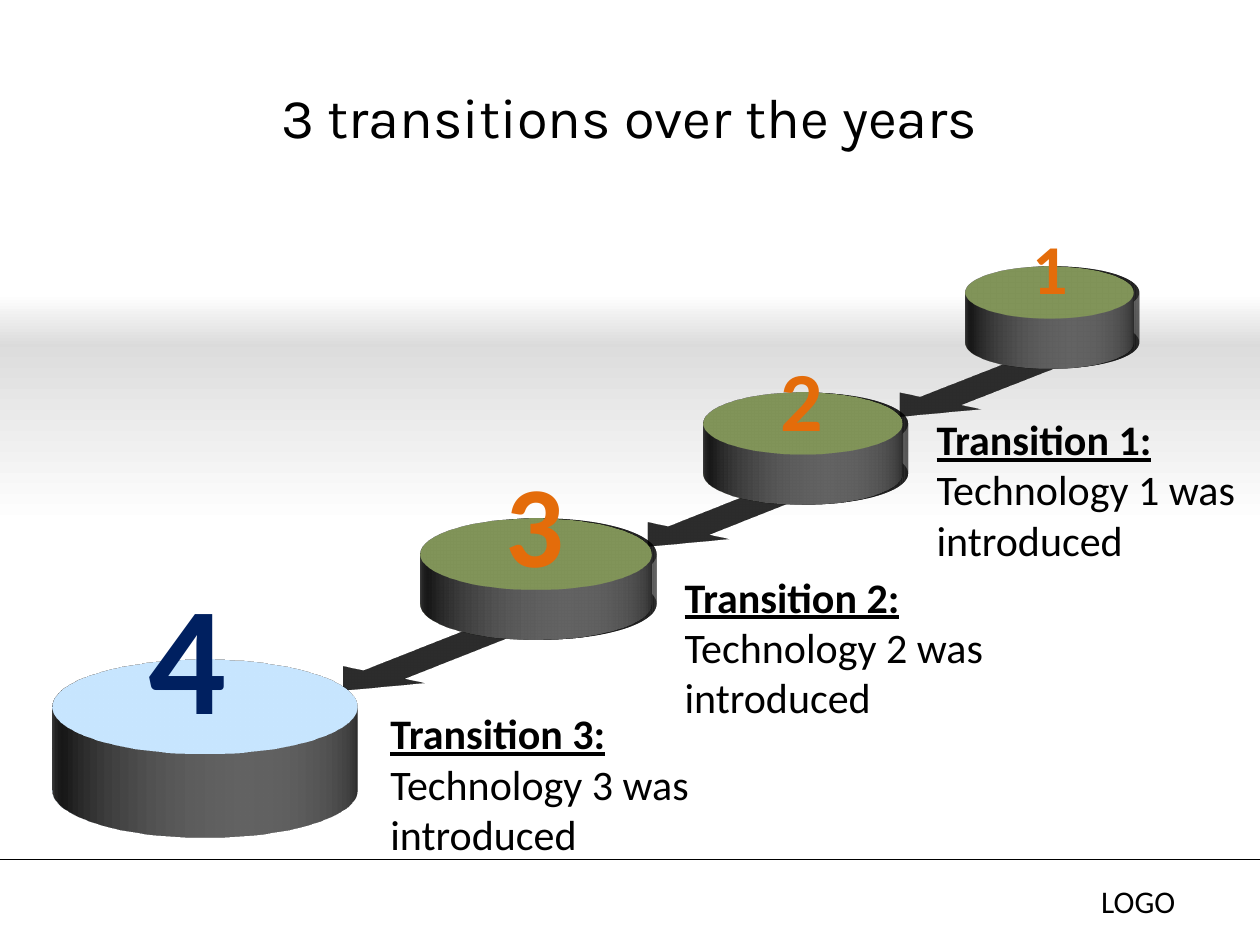
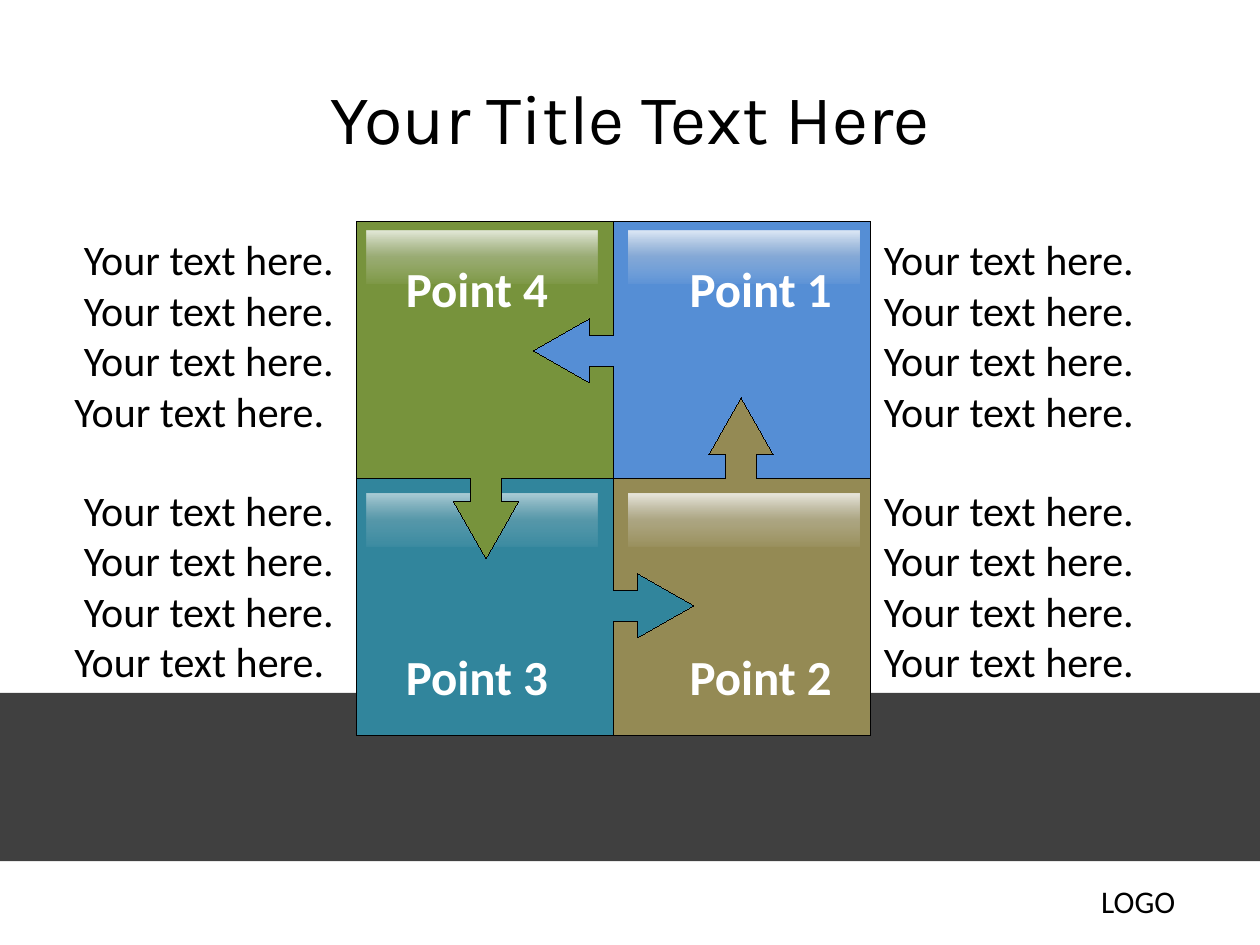
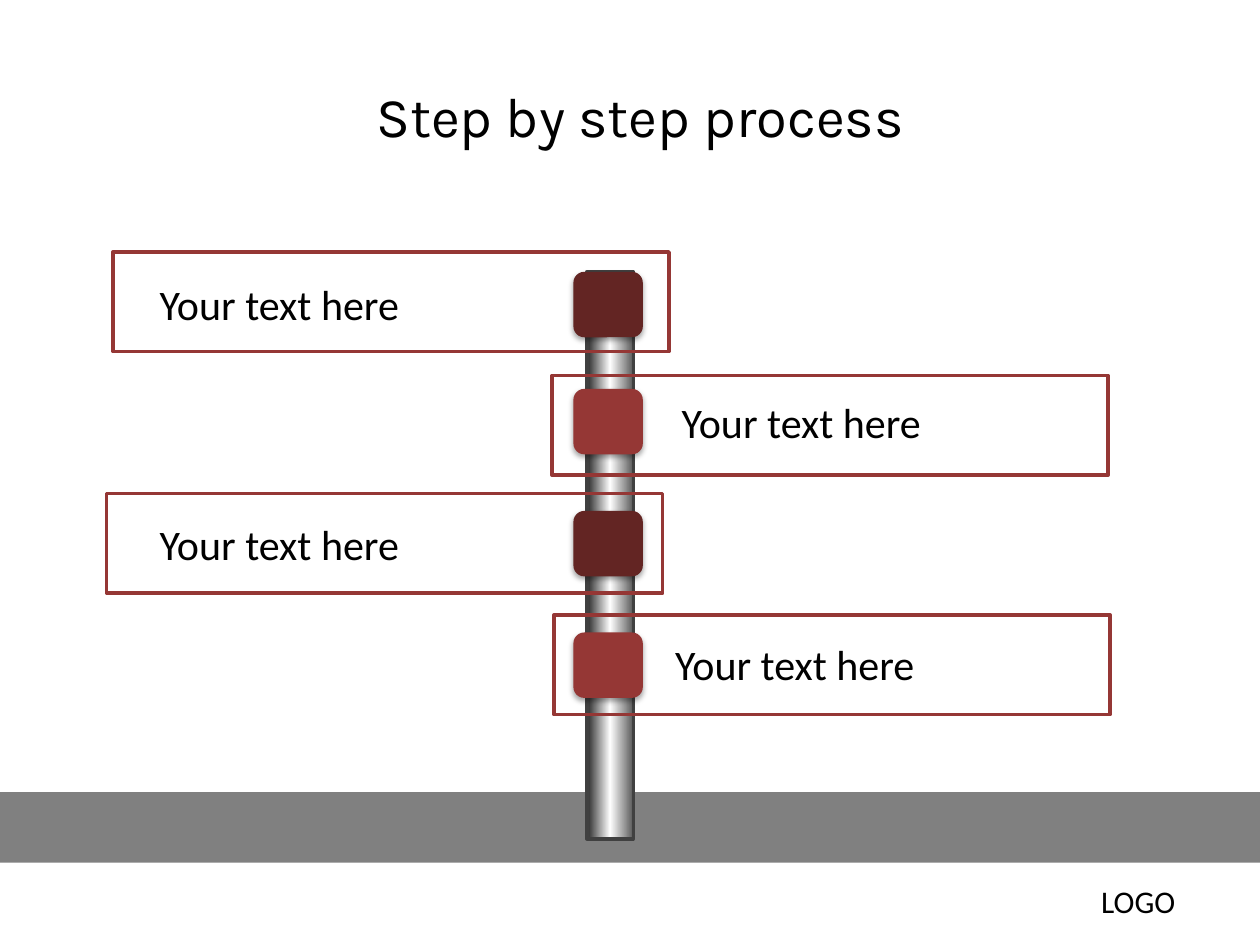
from dataclasses import dataclass
from typing import NamedTuple

from pptx import Presentation
from pptx.dml.color import RGBColor
from pptx.enum.shapes import MSO_CONNECTOR, MSO_SHAPE
from pptx.enum.text import MSO_ANCHOR, MSO_AUTO_SIZE, PP_ALIGN
from pptx.oxml import parse_xml
from pptx.oxml.ns import nsdecls, qn
from pptx.shapes.base import BaseShape
from pptx.slide import Slide
from pptx.text.text import Font
from pptx.util import Cm, Pt

COLOURS = {
    "black": "000000", "white": "FFFFFF", "mist": "DDDDDD", "haze": "DBDBDB",
    "steel": "C0C0C0", "moss": "4F6228", "sky": "95B3D7",
    "orange": "E46C0A", "navy": "002060",
    "charcoal": "404040", "green": "77933C", "blue": "558ED5",
    "teal": "31859C", "tan": "948A54", "sheen mid": "D9D9D9", "sheen end": "F2F2F2",
    "ground": "808080", "pole left": "262626", "pole right": "595959",
    "maroon": "632523", "red": "953735",
}
BODY_FONT, TITLE_FONT = "Calibri", "Karla"
SLIDE_WIDTH, SLIDE_HEIGHT = 25.4, 19.05
HAIRLINE = 0.01


class Point(NamedTuple):
    x: float
    y: float


class Area(NamedTuple):
    """Left, top, width and height in centimetres."""
    left: float
    top: float
    width: float
    height: float

    def lengths(self) -> list[int]:
        return [Cm(value) for value in self]


class Stop(NamedTuple):
    position: int
    colour: str
    opacity: int = 100


class View(NamedTuple):
    """Camera angles in degrees."""
    latitude: float
    longitude: float
    revolution: float


class Shadow(NamedTuple):
    blur: float
    distance: float
    direction: int
    opacity: int


@dataclass
class Stage:
    number: str
    corner: Point
    diameter: float
    depth: int
    cap: str
    number_area: Area
    number_size: int
    number_colour: str = "orange"
    shaded: bool = True


@dataclass
class Transition:
    number: int
    arrow: Point
    note: Point


@dataclass
class Piece:
    label: str
    colour: str
    quarter_turns: int
    column: int
    row: int
    sheen: tuple[int, int] = (81, 35)


@dataclass
class Step:
    frame: Point
    marker_top: float
    colour: str
    text_area: Area


TITLE_AREA = Area(1.27, 0.76, 22.86, 3.18)
FOOTER_LINE = 17.32
LOGO_AREA = Area(21.95, 17.65, 2.82, 1.02)

DISC_VIEW = View(288, 0, 0)
ARROW_VIEW = View(319.2, 67.2, 291.2)
DISC_SHADOW = Shadow(16, 3, 0, 40)
MARKER_SHADOW = Shadow(3.1, 1.8, 90, 35)
STAGES = [
    Stage("4", Point(1.06, 11.18), 6.14, 50, "sky",
          Area(2.74, 11.18, 2.11, 4.01), 88, "navy", False),
    Stage("3", Point(8.47, 8.84), 4.66, 30, "moss", Area(9.95, 8.99, 1.7, 3.07), 66),
    Stage("2", Point(14.18, 6.53), 4.02, 30, "moss", Area(15.49, 6.88, 1.37, 2.31), 48),
    Stage("1", Point(19.47, 4.2), 3.39, 30, "moss", Area(20.57, 4.4, 1.24, 1.96), 40),
]
TRANSITIONS = [
    Transition(3, Point(7.41, 10.92), Point(7.62, 14.14)),
    Transition(2, Point(13.55, 8.01), Point(13.55, 11.39)),
    Transition(1, Point(18.63, 5.4), Point(18.63, 8.21)),
]

PUZZLE_CENTRE = Point(12.37, 9.64)
PIECE_SIDE = 5.18
PIECES = [
    Piece("Point 3", "teal", 1, 0, 1, (59, 22)),
    Piece("Point 2", "tan", 2, 1, 1),
    Piece("Point 1", "blue", 3, 1, 0),
    Piece("Point 4", "green", 0, 0, 0),
]
SHEEN_LEFTS, SHEEN_TOPS = (7.39, 12.68), (4.65, 9.95)
LABEL_LEFTS, LABEL_TOPS = (7.81, 13.53), (5.08, 12.9)
PARAGRAPH_TOPS = (4.59, 9.64)

STEPS = [
    Step(Point(2.28, 5.08), 5.48, "maroon", Area(2.97, 5.48, 7.37, 1.27)),
    Step(Point(11.13, 7.57), 7.84, "red", Area(13.49, 7.87, 6.4, 1.27)),
    Step(Point(2.15, 9.95), 10.3, "maroon", Area(2.97, 10.33, 8.15, 1.27)),
    Step(Point(11.17, 12.4), 12.75, "red", Area(13.36, 12.75, 7.04, 1.27)),
]


def rgb(name: str) -> RGBColor:
    return RGBColor.from_string(COLOURS[name])


def style_font(font: Font, size: int, colour: str = "black",
               bold: bool = False, name: str = BODY_FONT) -> None:
    font.name, font.size, font.bold = name, Pt(size), bold
    font.color.rgb = rgb(colour)


def colour_xml(name: str, opacity: int = 100) -> str:
    return (f'<a:srgbClr val="{COLOURS[name]}">'
            f'<a:alpha val="{opacity * 1000}"/></a:srgbClr>')


def finish(shape: BaseShape, fill: str | None = None,
           line: str | None = None, line_width: float = HAIRLINE) -> BaseShape:
    """Set fill and line, and remove the theme shadow."""
    shape.shadow.inherit = False
    if fill:
        shape.fill.solid()
        shape.fill.fore_color.rgb = rgb(fill)
    else:
        shape.fill.background()
    if line:
        shape.line.color.rgb = rgb(line)
        shape.line.width = Pt(line_width)
    else:
        shape.line.fill.background()
    return shape


def add_preset(page: Slide, kind: MSO_SHAPE, area: Area, fill: str | None = None,
               line: str | None = None, line_width: float = HAIRLINE) -> BaseShape:
    return finish(page.shapes.add_shape(kind, *area.lengths()), fill, line, line_width)


def add_outline(page: Slide, points: list[Point], fill: str, line: str) -> BaseShape:
    corners = [(Cm(point.x), Cm(point.y)) for point in points]
    builder = page.shapes.build_freeform(*corners[0])
    builder.add_line_segments(corners[1:], close=True)
    return finish(builder.convert_to_shape(), fill, line)


def set_gradient(shape: BaseShape, stops: list[Stop], angle: int) -> None:
    """Replace an empty fill with a gradient, its angle clockwise in degrees."""
    marks = "".join(f'<a:gs pos="{stop.position * 1000}">'
                    f'{colour_xml(stop.colour, stop.opacity)}</a:gs>' for stop in stops)
    gradient = parse_xml(
        f'<a:gradFill {nsdecls("a")} rotWithShape="1"><a:gsLst>{marks}</a:gsLst>'
        f'<a:lin ang="{angle * 60000}" scaled="0"/></a:gradFill>')
    properties = shape._element.spPr
    properties.replace(properties.find(qn("a:noFill")), gradient)


def add_shadow(shape: BaseShape, shadow: Shadow) -> None:
    shape._element.spPr.find(qn("a:effectLst")).append(parse_xml(
        f'<a:outerShdw {nsdecls("a")} blurRad="{Pt(shadow.blur)}" '
        f'dist="{Pt(shadow.distance)}" dir="{shadow.direction * 60000}" '
        f'algn="ctr" rotWithShape="0">{colour_xml("black", shadow.opacity)}'
        '</a:outerShdw>'))


def set_view(shape: BaseShape, view: View, depth: int = 0) -> None:
    """Turn a shape in space and extrude it by a depth in points."""
    latitude, longitude, revolution = (round(angle * 60000) for angle in view)
    properties = shape._element.spPr
    properties.append(parse_xml(
        f'<a:scene3d {nsdecls("a")}><a:camera prst="orthographicFront">'
        f'<a:rot lat="{latitude}" lon="{longitude}" rev="{revolution}"/></a:camera>'
        '<a:lightRig rig="threePt" dir="t"/></a:scene3d>'))
    if depth:
        properties.append(parse_xml(
            f'<a:sp3d {nsdecls("a")} extrusionH="{Pt(depth)}"><a:extrusionClr>'
            f'{colour_xml("steel")}</a:extrusionClr></a:sp3d>'))


def add_text(page: Slide, area: Area, lines: list[str], size: int, colour: str = "black",
             bold: bool = False, align: PP_ALIGN = PP_ALIGN.LEFT,
             wrap: bool = True) -> BaseShape:
    box = page.shapes.add_textbox(*area.lengths())
    frame = box.text_frame
    frame.word_wrap = wrap
    frame.auto_size = MSO_AUTO_SIZE.SHAPE_TO_FIT_TEXT
    frame.text = "\n".join(lines)
    for paragraph in frame.paragraphs:
        paragraph.alignment = align
        style_font(paragraph.font, size, colour, bold)
    return box


def add_page(deck: Presentation, title: str, size: int, area: Area = TITLE_AREA) -> Slide:
    page = deck.slides.add_slide(deck.slide_layouts[5])
    box = page.shapes.title
    box.left, box.top, box.width, box.height = area.lengths()
    frame = box.text_frame
    frame.text = title
    frame.vertical_anchor = MSO_ANCHOR.MIDDLE
    frame.paragraphs[0].alignment = PP_ALIGN.CENTER
    style_font(frame.paragraphs[0].font, size, name=TITLE_FONT)
    return page


def move_footer_to_layout(page: Slide) -> None:
    """Draw the footer line and logo text, then share them through the layout."""
    rule = page.shapes.add_connector(MSO_CONNECTOR.STRAIGHT, Cm(0), Cm(FOOTER_LINE),
                                     Cm(SLIDE_WIDTH), Cm(FOOTER_LINE))
    rule.line.color.rgb = rgb("black")
    rule.line.width = Pt(0.75)
    rule._element.spPr.append(parse_xml(f'<a:effectLst {nsdecls("a")}/>'))
    logo = add_text(page, LOGO_AREA, ["LOGO"], 18)
    for shape in (rule, logo):
        page.slide_layout.shapes._spTree.append(shape._element)


def add_band(page: Slide, top: float, height: float, fill: str | None = None) -> BaseShape:
    return add_preset(page, MSO_SHAPE.RECTANGLE, Area(0, top, SLIDE_WIDTH, height), fill)


def add_disc(page: Slide, stage: Stage) -> None:
    disc = add_preset(page, MSO_SHAPE.OVAL,
                      Area(*stage.corner, stage.diameter, stage.diameter),
                      stage.cap, "sky", 2)
    line_colour = disc.line._ln.find(qn("a:solidFill"))
    line_colour.replace(line_colour[0], parse_xml(
        colour_xml("sky", 69).replace("<a:srgbClr", f'<a:srgbClr {nsdecls("a")}', 1)))
    if stage.shaded:
        add_shadow(disc, DISC_SHADOW)
    set_view(disc, DISC_VIEW, stage.depth)


def add_note(page: Slide, transition: Transition) -> None:
    number = transition.number
    box = add_text(page, Area(*transition.note, 6.98, 3.33),
                   [f"Transition {number}:", f"Technology {number} was introduced"], 24)
    heading = box.text_frame.paragraphs[0]
    heading.font.bold = heading.font.underline = True


def build_transitions(deck: Presentation) -> None:
    page = add_page(deck, "3 transitions over the years", 32)
    move_footer_to_layout(page)
    set_gradient(add_band(page, 6.99, 3.6), [Stop(0, "mist"), Stop(100, "white")], 90)
    set_gradient(add_band(page, 5.92, 1.08), [Stop(0, "white"), Stop(100, "haze")], 90)
    for transition in TRANSITIONS:
        arrow = add_preset(page, MSO_SHAPE.DOWN_ARROW,
                           Area(*transition.arrow, 2.33, 4.7), "black")
        set_view(arrow, ARROW_VIEW)
    for stage in STAGES:
        add_disc(page, stage)
    for stage in reversed(STAGES):
        add_text(page, stage.number_area, [stage.number], stage.number_size,
                 stage.number_colour, bold=True, wrap=False)
    for transition in TRANSITIONS:
        add_note(page, transition)


def piece_outline(quarter_turns: int) -> list[Point]:
    """Outline of the upper left piece, turned anticlockwise about the puzzle centre."""
    side, middle, stem, head, neck, tip = PIECE_SIDE, 2.57, 0.31, 0.65, 0.48, 1.62
    profile = [(stem, 0), (stem, neck), (head, neck), (0, tip),
               (-head, neck), (-stem, neck), (-stem, 0)]
    notch = [Point(-out, -along - middle) for along, out in reversed(profile)]
    tab = [Point(-along - middle, out) for along, out in profile]
    points = [Point(0, 0), *notch, Point(0, -side), Point(-side, -side),
              Point(-side, 0), *reversed(tab)]
    points[-len(tab):] = sorted_tab(tab)
    for _ in range(quarter_turns):
        points = [Point(point.y, -point.x) for point in points]
    return [Point(PUZZLE_CENTRE.x + point.x, PUZZLE_CENTRE.y + point.y)
            for point in points]


def sorted_tab(tab: list[Point]) -> list[Point]:
    """Tab points in order from left to right."""
    return tab if tab[0].x < tab[-1].x else tab[::-1]


def build_puzzle(deck: Presentation) -> None:
    page = add_page(deck, "Your Title Text Here", 40)
    add_band(page, 13.97, 3.39, "charcoal")
    for piece in PIECES:
        add_outline(page, piece_outline(piece.quarter_turns), piece.colour, "black")
        sheen = add_preset(page, MSO_SHAPE.RECTANGLE, Area(
            SHEEN_LEFTS[piece.column], SHEEN_TOPS[piece.row], 4.65, 1.07))
        top_opacity, middle_opacity = piece.sheen
        set_gradient(sheen, [Stop(0, "white", top_opacity),
                             Stop(50, "sheen mid", middle_opacity),
                             Stop(100, "sheen end", 5)], 90)
    for piece in PIECES:
        add_text(page, Area(LABEL_LEFTS[piece.column], LABEL_TOPS[piece.row], 3.61, 1.45),
                 [piece.label], 28, "white", bold=True, align=PP_ALIGN.CENTER)
    sentences = " ".join(["Your text here."] * 4)
    for top in PARAGRAPH_TOPS:
        add_text(page, Area(0, top, 6.98, 4.37), [sentences + " "], 24,
                 align=PP_ALIGN.RIGHT)
        add_text(page, Area(17.57, top, 6.55, 4.37), [sentences], 24)


def build_steps(deck: Presentation) -> None:
    page = add_page(deck, "Step by step process", 32, Area(1.48, 1.27, 22.86, 2.11))
    add_band(page, 15.97, 1.42, "ground")
    pole = add_preset(page, MSO_SHAPE.RECTANGLE, Area(11.83, 5.48, 0.94, 11.43),
                      line="charcoal", line_width=2)
    set_gradient(pole, [Stop(0, "pole left"), Stop(50, "white"),
                        Stop(100, "pole right")], 0)
    for step in STEPS:
        marker = add_preset(page, MSO_SHAPE.ROUNDED_RECTANGLE,
                            Area(11.56, step.marker_top, 1.4, 1.32), step.colour)
        add_shadow(marker, MARKER_SHADOW)
        add_preset(page, MSO_SHAPE.RECTANGLE, Area(*step.frame, 11.21, 2.01),
                   line="red", line_width=2)
        add_text(page, step.text_area, ["Your text here"], 24)


def main() -> None:
    deck = Presentation()
    deck.slide_width, deck.slide_height = Cm(SLIDE_WIDTH), Cm(SLIDE_HEIGHT)
    build_transitions(deck)
    build_puzzle(deck)
    build_steps(deck)
    deck.save("out.pptx")


if __name__ == "__main__":
    main()
